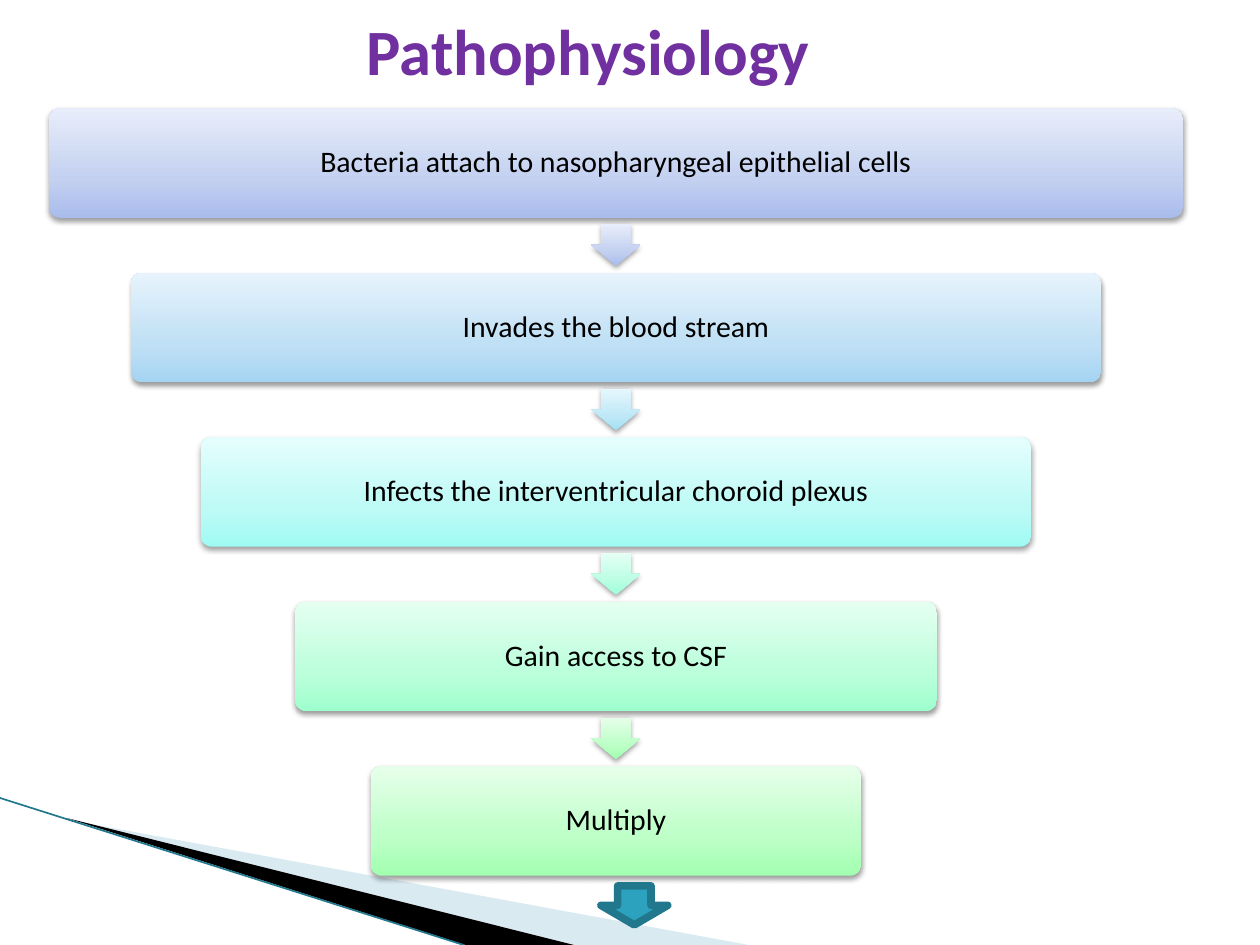
from lxml import etree
from pptx import Presentation
from pptx.dml.color import RGBColor
from pptx.enum.shapes import MSO_CONNECTOR, MSO_SHAPE
from pptx.enum.text import MSO_ANCHOR, MSO_AUTO_SIZE, PP_ALIGN
from pptx.oxml import parse_xml
from pptx.oxml.ns import qn
from pptx.util import Pt

ROUND_RECT, DOWN_ARROW = MSO_SHAPE.ROUNDED_RECTANGLE, MSO_SHAPE.DOWN_ARROW
STRAIGHT = MSO_CONNECTOR.STRAIGHT
MIDDLE, NO_FIT = MSO_ANCHOR.MIDDLE, MSO_AUTO_SIZE.NONE
LEFT, CENTER = PP_ALIGN.LEFT, PP_ALIGN.CENTER
NS = 'xmlns:a="http://schemas.openxmlformats.org/drawingml/2006/main"'

INDIGO = ("A9BCEC", "C3D0F0", "E8EDFA")
BLUE = ("A5D4F3", "C0E0F5", "E6F3FC")
SKY = ("A3E0F5", "BFE8F7", "E6F7FD")
AQUA = ("A0FAF4", "BDFAF6", "E5FEFD")
MINT = ("9DFFDA", "BBFEE4", "E5FFF5")
SPRING = ("9EFFCD", "BBFFDB", "E5FFF1")
GREEN = ("A2FFB0", "BDFFC7", "E6FFEA")

STEPS = [
    ("Bacteria attach to nasopharyngeal epithelial cells", 648, INDIGO, INDIGO),
    ("Invades the blood stream", 554.4, BLUE, SKY),
    ("Infects the interventricular choroid plexus", 474.4, AQUA, MINT),
    ("Gain access to CSF", 366.6, SPRING, GREEN),
    ("Multiply", 280.2, GREEN, None),
]


def rgb(color):
    """Turn a hex string into a colour."""
    return RGBColor.from_string(color)


def write(tf, text, size=17, color="000000", bold=False, align=CENTER, spacing=None):
    """Put one formatted paragraph into a text frame."""
    tf.word_wrap = True
    tf.auto_size = NO_FIT
    tf.vertical_anchor = MIDDLE
    p = tf.paragraphs[0]
    p.alignment = align
    p.line_spacing = spacing
    r = p.add_run()
    r.text = text
    r.font.name, r.font.size, r.font.bold = "Calibri", Pt(size), bold
    r.font.color.rgb = rgb(color)


def add_shape(s, kind, x, y, w, h):
    """Add a preset shape without outline or inherited shadow."""
    sp = s.shapes.add_shape(kind, Pt(x), Pt(y), Pt(w), Pt(h))
    sp.shadow.inherit = False
    sp.line.fill.background()
    return sp


def shade(sp, colors):
    """Give a shape a vertical gradient and a soft shadow below it."""
    stops = "".join(
        f'<a:gs pos="{pos}"><a:srgbClr val="{color}"/></a:gs>'
        for pos, color in zip((0, 35000, 100000), colors)
    )
    spPr = sp._element.spPr
    spPr.find(qn("a:prstGeom")).addnext(parse_xml(
        f'<a:gradFill {NS} rotWithShape="1"><a:gsLst>{stops}</a:gsLst>'
        '<a:lin ang="16200000" scaled="0"/></a:gradFill>'
    ))
    spPr.find(qn("a:effectLst")).append(parse_xml(
        f'<a:outerShdw {NS} blurRad="{Pt(3.1)}" dist="{Pt(1.6)}" dir="5400000" rotWithShape="0">'
        '<a:srgbClr val="000000"><a:alpha val="38000"/></a:srgbClr></a:outerShdw>'
    ))


def add_wedge(s, points, color, alpha=None):
    """Add a filled outline through the given points."""
    start, *rest = [(Pt(x), Pt(y)) for x, y in points]
    builder = s.shapes.build_freeform(*start)
    builder.add_line_segments(rest, close=True)
    sp = builder.convert_to_shape()
    sp.shadow.inherit = False
    sp.line.fill.background()
    sp.fill.solid()
    sp.fill.fore_color.rgb = rgb(color)
    if alpha:
        clr = sp._element.spPr.find(qn("a:solidFill"))[0]
        etree.SubElement(clr, qn("a:alpha")).set("val", str(alpha * 1000))


def add_corner(s, x, y, w, h):
    """Draw the swoosh in the lower left corner."""
    bottom = y + h
    add_wedge(s, [(x + 39.6, y + 12.6), (x + w, bottom), (x + 328.3, bottom)], "A0CBDC", 40)
    add_wedge(s, [(x + 38.2, y + 11.5), (x + 328, bottom), (x + 266, bottom)], "000000")
    line = s.shapes.add_connector(STRAIGHT, Pt(x), Pt(y), Pt(x + 265), Pt(bottom))
    line.line.color.rgb = rgb("21788D")
    line.line.width = Pt(0.95)
    etree.SubElement(line._element.spPr, qn("a:effectLst"))


def add_title(s, x, y, w, h):
    """Place and format the slide title."""
    sp = s.shapes.title
    sp.left, sp.top, sp.width, sp.height = Pt(x), Pt(y), Pt(w), Pt(h)
    write(sp.text_frame, "Pathophysiology", size=36.9, color="7030A0", bold=True, align=LEFT)


def add_flow(s, x, y, w, h):
    """Stack the narrowing steps with an arrow below each."""
    box_h, arrow_w, arrow_h, arrow_gap = 62.6, 28, 23.8, 66.2
    pitch = (h - box_h) / (len(STEPS) - 1)
    center = x + w / 2
    for i, (text, box_w, colors, arrow_colors) in enumerate(STEPS):
        top = y + i * pitch
        sp = add_shape(s, ROUND_RECT, center - box_w / 2, top, box_w, box_h)
        sp.adjustments[0] = 0.1
        shade(sp, colors)
        tf = sp.text_frame
        tf.margin_left = tf.margin_right = tf.margin_top = tf.margin_bottom = Pt(5)
        write(tf, text, spacing=0.9)
        if arrow_colors:
            arrow = add_shape(s, DOWN_ARROW, center - arrow_w / 2, top + arrow_gap, arrow_w, arrow_h)
            arrow.adjustments[0] = 0.6
            shade(arrow, arrow_colors)


def add_last_arrow(s, x, y, w, h):
    """Add the outlined arrow that leads on from the last step."""
    sp = add_shape(s, DOWN_ARROW, x, y, w, h)
    sp.fill.solid()
    sp.fill.fore_color.rgb = rgb("2DA2BF")
    sp.line.color.rgb = rgb("21788D")
    sp.line.width = Pt(4.33)


def main():
    """Build the slide and save it."""
    prs = Presentation()
    prs.slide_width, prs.slide_height = Pt(720), Pt(540)
    s = prs.slides.add_slide(prs.slide_layouts[5])
    add_corner(s, 0, 456, 428, 84)
    add_flow(s, 28, 61.9, 648, 438.5)
    add_title(s, 202.3, 0, 360, 56.2)
    add_last_arrow(s, 343.4, 506.2, 38.2, 22.3)
    prs.save("out.pptx")


if __name__ == "__main__":
    main()
